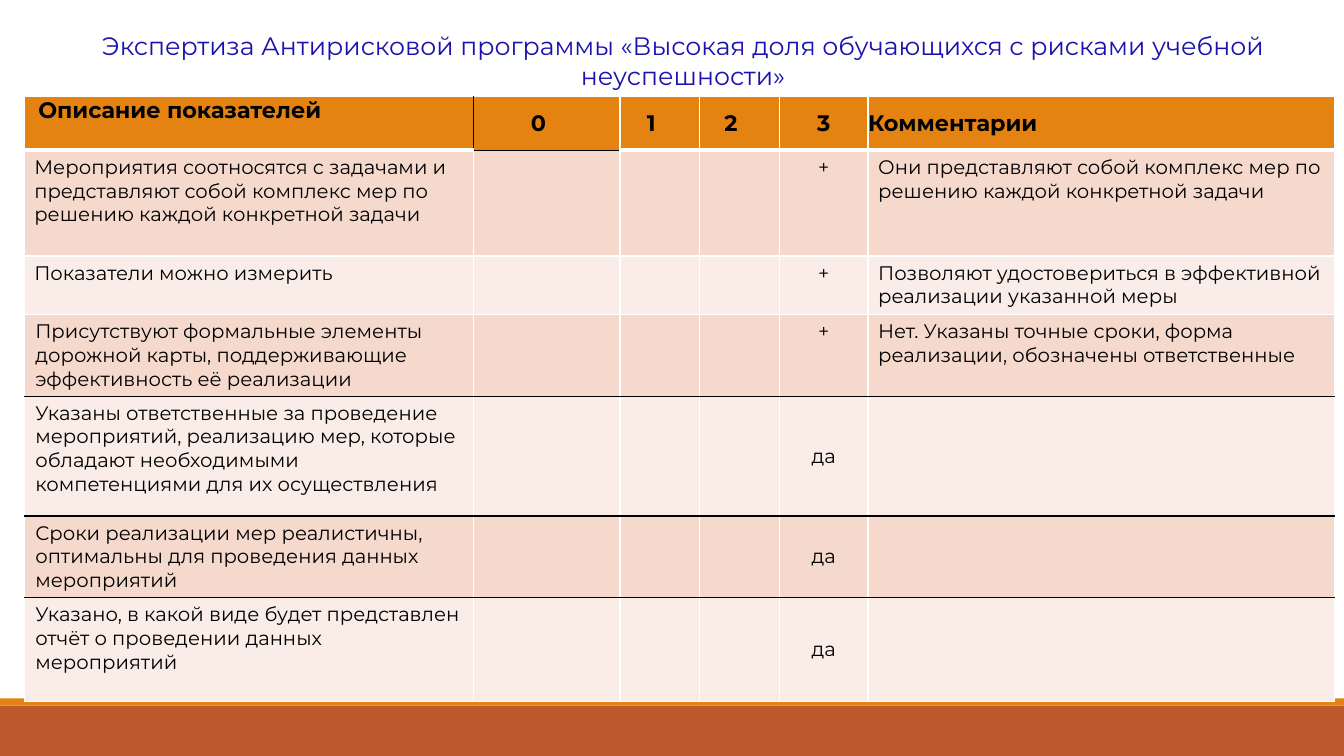
from lxml import etree
from pptx import Presentation
from pptx.dml.color import RGBColor
from pptx.enum.shapes import MSO_SHAPE
from pptx.enum.text import MSO_ANCHOR, PP_ALIGN
from pptx.oxml.ns import qn
from pptx.util import Inches, Pt

RECT = MSO_SHAPE.RECTANGLE
LEFT, CENTER = PP_ALIGN.LEFT, PP_ALIGN.CENTER
TOP, MIDDLE = MSO_ANCHOR.TOP, MSO_ANCHOR.MIDDLE

FONT = "Montserrat"
WHITE, BLACK, BLUE = "FFFFFF", "000000", "1C11AF"
ORANGE, RUST = "E48312", "BD582C"
BANDS = ("F5D9CC", "FAEDE7")
WIDE, HIGH = 13.33, 7.5

TITLE = "Экспертиза Антирисковой программы «Высокая доля обучающихся с рисками учебной неуспешности»"
HEAD = ("Описание показателей", "0", "1", "2", "3", "Комментарии")
# description, mark in column 3, comment
ROWS = [
    ("Мероприятия соотносятся с задачами и представляют собой комплекс мер по решению каждой конкретной задачи",
     "+", "Они представляют собой комплекс мер по решению каждой конкретной задачи"),
    ("Показатели можно измерить",
     "+", "Позволяют удостовериться в эффективной реализации указанной меры"),
    ("Присутствуют формальные элементы дорожной карты, поддерживающие эффективность её реализации",
     "+", "Нет. Указаны точные сроки, форма реализации, обозначены ответственные"),
    ("Указаны ответственные за проведение мероприятий, реализацию мер, которые обладают необходимыми "
     "компетенциями для их осуществления", "да", ""),
    ("Сроки реализации мер реалистичны, оптимальны для проведения данных мероприятий", "да", ""),
    ("Указано, в какой виде будет представлен отчёт о проведении данных мероприятий", "да", ""),
]
COLS = (4.46, 1.45, 0.79, 0.79, 0.88, 4.63)
TALL = (0.53, 1.05, 0.58, 0.79, 1.19, 0.8, 1.03)
# horizontal rules from the top edge to the bottom edge
RULES = [(WHITE, 1), (WHITE, 3), (WHITE, 1), (WHITE, 1),
         (BLACK, 1), (BLACK, 1), (BLACK, 1), (WHITE, 1)]


def color(code):
    return RGBColor.from_string(code)


def write(frame, text, size=14, tint=BLACK, bold=False, align=LEFT, indent=0):
    frame.word_wrap = True
    para = frame.paragraphs[0]
    para.alignment = align
    if indent:
        para._p.get_or_add_pPr().set("marL", str(Inches(indent)))
    run = para.add_run()
    run.text = text
    run.font.name, run.font.size, run.font.bold = FONT, Pt(size), bold
    run.font.color.rgb = color(tint)


def inset(cell, right=0):
    cell.margin_left = cell.margin_top = cell.margin_bottom = 0
    cell.margin_right = Inches(right)


def edge(cell, side, tint, width):
    """Draw one side (L, R, T or B) of a cell."""
    line = etree.SubElement(cell._tc.get_or_add_tcPr(), qn("a:ln" + side), w=str(Pt(width)))
    fill = etree.SubElement(line, qn("a:solidFill"))
    etree.SubElement(fill, qn("a:srgbClr"), val=tint)


def bar(slide, top, high, tint):
    shape = slide.shapes.add_shape(RECT, 0, Inches(top), Inches(WIDE), Inches(high))
    shape.shadow.inherit = False
    shape.fill.solid()
    shape.fill.fore_color.rgb = color(tint)
    shape.line.fill.background()


def style(cell, row, col):
    """Set the borders and the fill of a cell."""
    under_zero = {(0, 1): (BLACK, 1), (1, 1): (BLACK, 1)}
    above = under_zero[row, col] if (row, col) == (1, 1) else RULES[row]
    below = under_zero.get((row, col), RULES[row + 1]) if row == 0 else RULES[row + 1]
    edge(cell, "L", BLACK if (row, col) == (0, 1) else WHITE, 1)
    edge(cell, "R", BLACK if (row, col) == (0, 0) else WHITE, 1)
    edge(cell, "T", *above)
    edge(cell, "B", *below)
    cell.fill.solid()
    cell.fill.fore_color.rgb = color(BANDS[(row - 1) % 2] if row else ORANGE)


def grid(slide):
    table = slide.shapes.add_table(len(TALL), len(COLS), Inches(0.24), Inches(0.96),
                                   Inches(sum(COLS)), Inches(sum(TALL))).table
    for col, width in enumerate(COLS):
        table.columns[col].width = Inches(width)
    for row, high in enumerate(TALL):
        table.rows[row].height = Inches(high)
        for col in range(len(COLS)):
            style(table.cell(row, col), row, col)

    for col, text in enumerate(HEAD):
        cell = table.cell(0, col)
        inset(cell, 0.17 if text in ("0", "1", "2") else 0)
        cell.vertical_anchor = MIDDLE if col else TOP
        write(cell.text_frame, text, size=16, bold=True,
              align=CENTER if text.isdigit() else LEFT, indent=0 if col else 0.14)

    for row, (about, mark, note) in enumerate(ROWS, 1):
        write(table.cell(row, 0).text_frame, about, indent=0.01 if row > 2 else 0)
        cell = table.cell(row, 4)
        if mark == "да":
            inset(cell)
            cell.vertical_anchor = MIDDLE
        write(cell.text_frame, mark, align=CENTER)
        if note:
            write(table.cell(row, 5).text_frame, note)


def main():
    deck = Presentation()
    deck.slide_width, deck.slide_height = Inches(WIDE), Inches(HIGH)
    slide = deck.slides.add_slide(deck.slide_layouts[6])
    bar(slide, 7, 0.5, RUST)
    bar(slide, 6.93, 0.07, ORANGE)
    grid(slide)
    title = slide.shapes.add_textbox(Inches(0.65), Inches(0.25), Inches(12.25), Inches(0.71))
    write(title.text_frame, TITLE, size=18, tint=BLUE, align=CENTER)
    deck.save("out.pptx")


if __name__ == "__main__":
    main()
